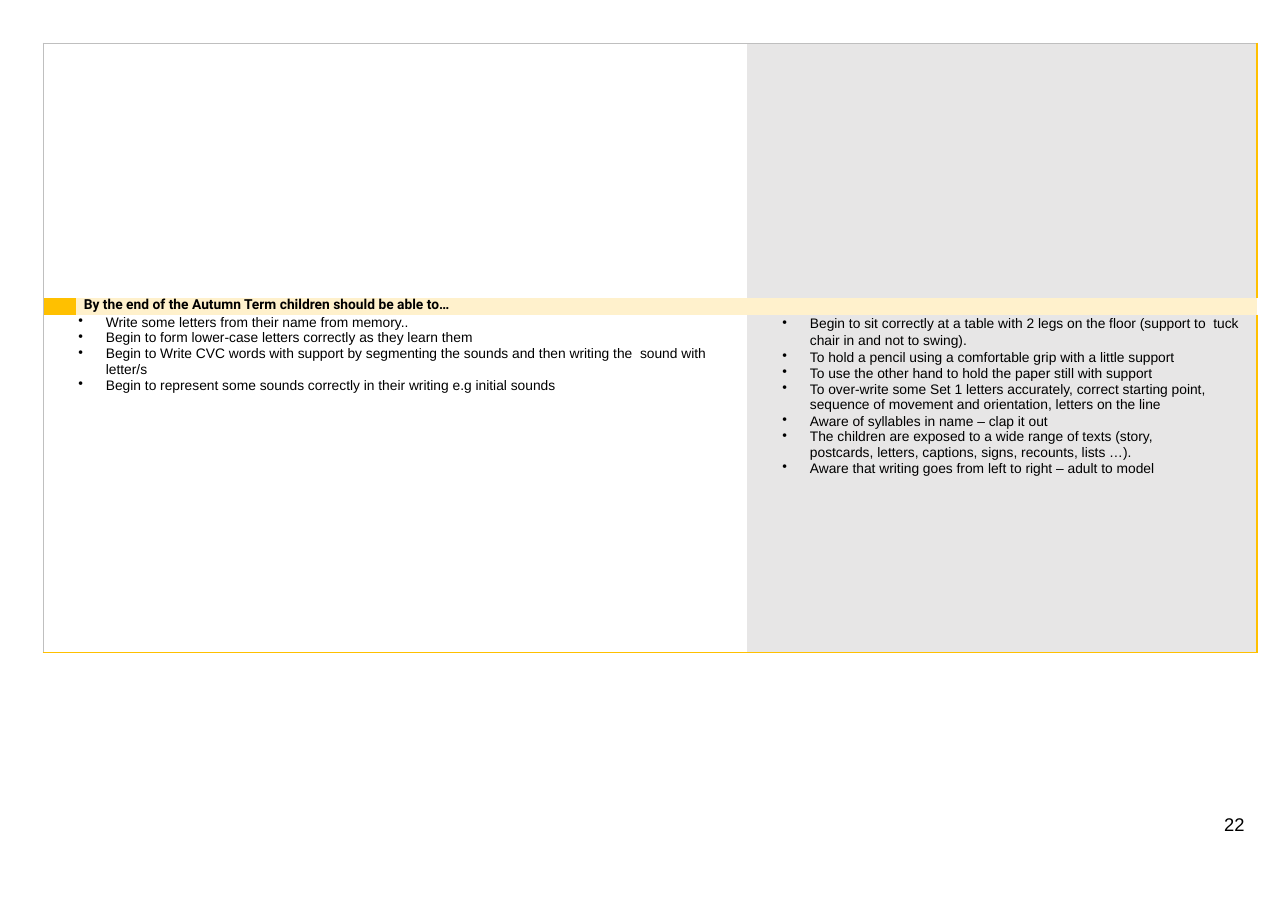
from dataclasses import dataclass

from lxml.etree import SubElement
from pptx import Presentation
from pptx.dml.color import RGBColor
from pptx.oxml.ns import qn
from pptx.table import Table, _Cell
from pptx.text.text import _Paragraph
from pptx.util import Pt

GOLD, CREAM, GREY, LINE_GREY, BLACK = "FFC000", "FFF1CC", "E7E6E6", "BFBFBF", "000000"
COLUMN_WIDTHS = (21.6, 438.5, 333.4)
ROW_HEIGHTS = (166.3, 11.2, 221)
NO_STYLE = "{2D5ABB26-0587-4C30-8999-92F81FD0307C}"

BODY_FORMAT = {"name": "Arial", "size": Pt(9), "bold": False}
HEADING_FORMAT = {"name": "Roboto", "size": Pt(9), "bold": True}
NUMBER_FORMAT = {"name": "Arial", "size": Pt(12), "bold": False}
NO_MARGINS = {f"margin_{side}": Pt(0) for side in ("left", "top", "right", "bottom")}


@dataclass
class Bullet:
    text: str
    line_spacing: float = 1.0  # a multiple, or a Pt length
    space_before: float = 0
    right_margin: float = 0


@dataclass
class Border:
    tag: str
    colour: str
    width: float


LEFT = Border("a:lnL", LINE_GREY, 0.75)
RIGHT = Border("a:lnR", GOLD, 1.5)
TOP = Border("a:lnT", LINE_GREY, 0.75)
BOTTOM = Border("a:lnB", GOLD, 1)

WRITING_GOALS = [
    Bullet("Write some letters from their name from memory.."),
    Bullet("Begin to form lower-case letters correctly as they learn them", 1.02),
    Bullet("Begin to Write CVC words with support by segmenting the sounds and then "
           "writing the  sound with letter/s", 1.02, right_margin=14),
    Bullet("Begin to represent some sounds correctly in their writing e.g initial sounds",
           space_before=0.1),
]
READINESS_GOALS = [
    Bullet("Begin to sit correctly at a table with 2 legs on the floor (support to  tuck "
           "chair in and not to swing).", Pt(11), 0.2),
    Bullet("To hold a pencil using a comfortable grip with a little support", Pt(11), 0.2),
    Bullet("To use the other hand to hold the paper still with support", space_before=0.2),
    Bullet("To over-write some Set 1 letters accurately, correct starting point, "
           "sequence of movement and orientation, letters on the line", 1.02),
    Bullet("Aware of syllables in name – clap it out", Pt(10.7)),
    Bullet("The children are exposed to a wide range of texts (story, "
           "postcards, letters, captions, signs, recounts, lists …).", 1.02, right_margin=32),
    Bullet("Aware that writing goes from left to right – adult to model", space_before=0.2),
]


def colour(hex_value: str) -> RGBColor:
    return RGBColor.from_string(hex_value)


def apply(target: object, values: dict) -> None:
    for name, value in values.items():
        setattr(target, name, value)


def write(paragraph: _Paragraph, text: str, font_format: dict) -> None:
    run = paragraph.add_run()
    run.text = text
    apply(run.font, font_format)
    run.font.color.rgb = colour(BLACK)


def indent(paragraph: _Paragraph, left: float, first: float = 0, right: float = 0) -> None:
    properties = paragraph._p.get_or_add_pPr()
    for name, value in {"marL": left, "indent": first, "marR": right}.items():
        properties.set(name, str(Pt(value)))


def add_border(cell: _Cell, border: Border) -> None:
    line = SubElement(cell._tc.get_or_add_tcPr(), qn(border.tag), w=str(Pt(border.width)))
    fill = SubElement(line, qn("a:solidFill"))
    SubElement(fill, qn("a:srgbClr"), val=str(colour(border.colour)))


def add_bullets(cell: _Cell, bullets: list[Bullet]) -> None:
    frame = cell.text_frame
    for index, bullet in enumerate(bullets):
        paragraph = frame.add_paragraph() if index else frame.paragraphs[0]
        apply(paragraph, {"line_spacing": bullet.line_spacing,
                          "space_before": Pt(bullet.space_before)})
        indent(paragraph, 41, -18, bullet.right_margin)
        SubElement(paragraph._p.get_or_add_pPr(), qn("a:buChar"), char="•")
        write(paragraph, bullet.text, BODY_FORMAT)


def format_grid(table: Table) -> None:
    last_row, last_column = len(ROW_HEIGHTS) - 1, len(COLUMN_WIDTHS) - 1
    for column, width in zip(table.columns, COLUMN_WIDTHS):
        column.width = Pt(width)
    for row_index, height in enumerate(ROW_HEIGHTS):
        table.rows[row_index].height = Pt(height)
        for column_index in range(last_column + 1):
            cell = table.cell(row_index, column_index)
            apply(cell, NO_MARGINS)
            edges = ((LEFT, column_index == 0), (RIGHT, column_index == last_column),
                     (TOP, row_index == 0), (BOTTOM, row_index == last_row))
            for border, on_edge in edges:
                if on_edge:
                    add_border(cell, border)
            cell.fill.background()
            # Small end marks keep empty cells from stretching the narrow row
            end_mark = SubElement(cell.text_frame.paragraphs[0]._p, qn("a:endParaRPr"))
            end_mark.set("sz", "800")


def main() -> None:
    presentation = Presentation()
    apply(presentation, {"slide_width": Pt(841.7), "slide_height": Pt(595.4)})
    slide = presentation.slides.add_slide(presentation.slide_layouts[6])

    # Table grid
    frame = slide.shapes.add_table(3, 3, Pt(28.2), Pt(28.2),
                                   Pt(sum(COLUMN_WIDTHS)), Pt(sum(ROW_HEIGHTS)))
    table = frame.table
    apply(table, {"first_row": False, "horz_banding": False})
    table._tbl.tblPr.find(qn("a:tableStyleId")).text = NO_STYLE
    format_grid(table)
    for row, first, last in ((0, 0, 1), (1, 1, 2), (2, 0, 1)):
        table.cell(row, first).merge(table.cell(row, last))
    for row, column, fill in ((0, 2, GREY), (1, 0, GOLD), (1, 1, CREAM), (2, 2, GREY)):
        cell = table.cell(row, column)
        cell.fill.solid()
        cell.fill.fore_color.rgb = colour(fill)

    # Term heading
    heading = table.cell(1, 1).text_frame.paragraphs[0]
    heading.line_spacing = Pt(10.1)
    indent(heading, 5)
    write(heading, "By the end of the Autumn Term children should be able to…", HEADING_FORMAT)

    # Goals
    add_bullets(table.cell(2, 0), WRITING_GOALS)
    add_bullets(table.cell(2, 2), READINESS_GOALS)

    # Page number
    number_box = slide.shapes.add_textbox(Pt(797), Pt(530.6), Pt(19.4), Pt(16.6))
    apply(number_box.text_frame, {**NO_MARGINS, "margin_top": Pt(0.7), "word_wrap": True})
    number = number_box.text_frame.paragraphs[0]
    number.space_before = Pt(1.1)
    indent(number, 3)
    write(number, "22", NUMBER_FORMAT)

    presentation.save("out.pptx")


if __name__ == "__main__":
    main()
